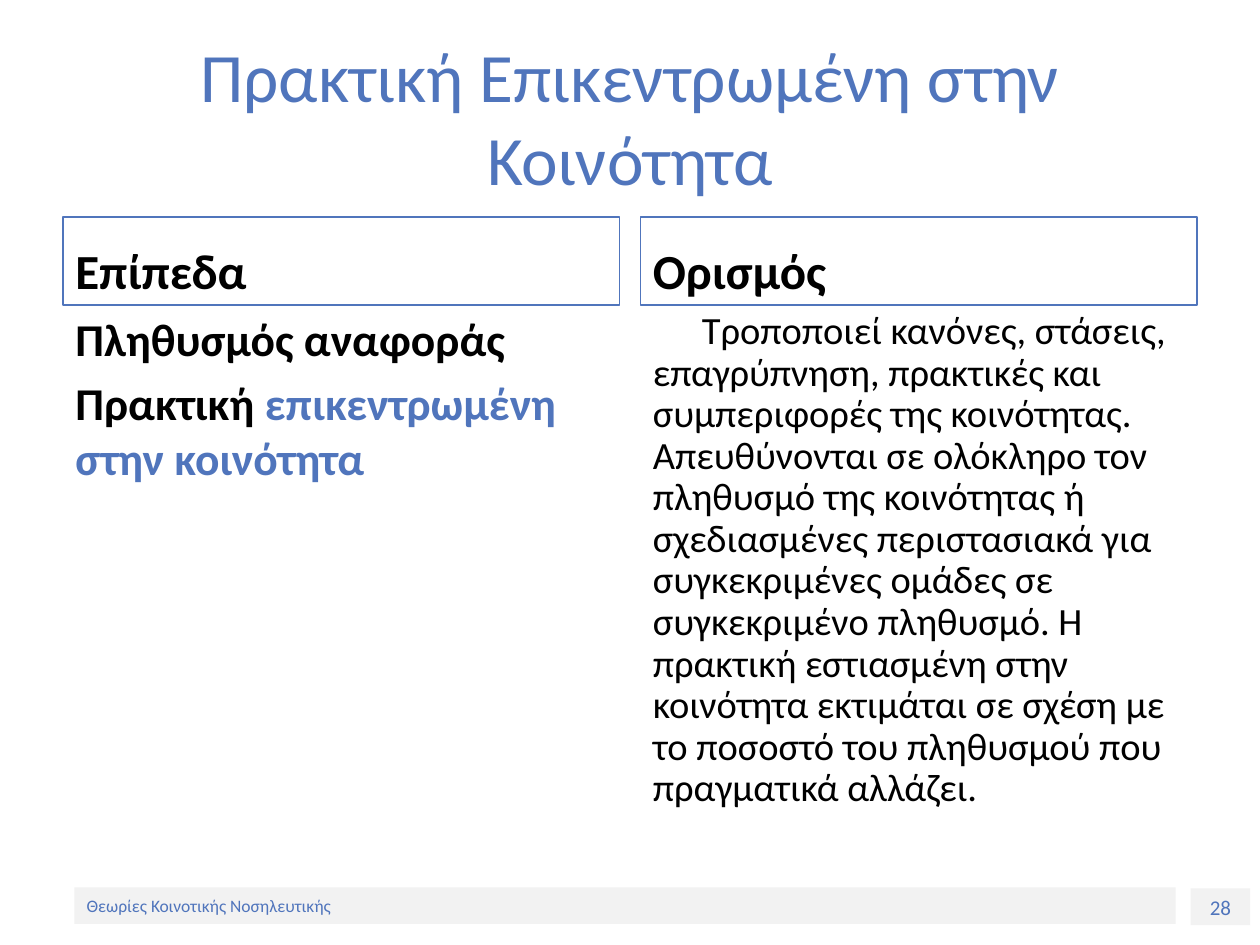
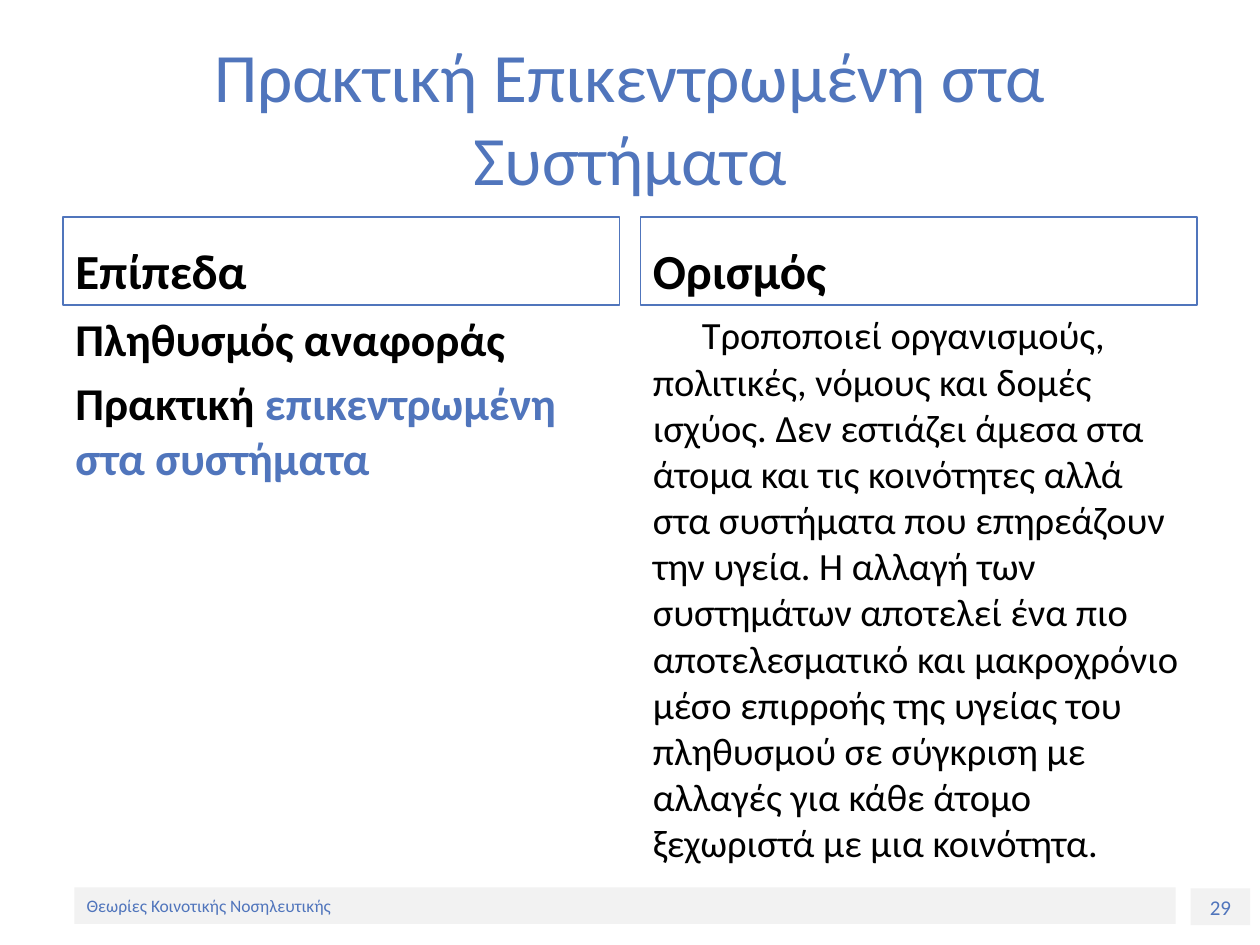
from dataclasses import dataclass

import pptx
import pptx.dml.color
import pptx.enum.shapes
import pptx.enum.text
import pptx.util

Pt = pptx.util.Pt
Align = pptx.enum.text.PP_ALIGN
Anchor = pptx.enum.text.MSO_ANCHOR


@dataclass(frozen=True)
class Theme:
    font: str = "Calibri"
    accent: str = "5075BC"
    ink: str = "000000"
    band: str = "F2F2F2"
    title_size: float = 39.6
    heading_size: float = 28
    level_size: float = 26
    definition_size: float = 22
    number_size: float = 12
    footer_size: float = 10
    outline: float = 0.75
    space_ratio: float = 0.2
    first_indent: float = 28


THEME = Theme()
PAGE_WIDTH, PAGE_HEIGHT = 720, 540
MARGIN, COLUMN_WIDTH = 36, 318
COLUMN_LEFTS = (MARGIN, PAGE_WIDTH - MARGIN - COLUMN_WIDTH)
HEADING_TOP, HEADING_HEIGHT = 124, 50.4
BODY_TOP, BODY_HEIGHT = HEADING_TOP + HEADING_HEIGHT, 305
FOOTER = "Θεωρίες Κοινοτικής Νοσηλευτικής"
HEADINGS = ("Επίπεδα", "Ορισμός")
FIRST_NUMBER = 28

TOPICS = [
    {
        "title": "Πρακτική Επικεντρωμένη στην Κοινότητα",
        "focus": "επικεντρωμένη στην κοινότητα",
        "definition": (
            "Τροποποιεί κανόνες, στάσεις, επαγρύπνηση, πρακτικές και "
            "συμπεριφορές της κοινότητας. Απευθύνονται σε ολόκληρο τον "
            "πληθυσμό της κοινότητας ή σχεδιασμένες περιστασιακά για "
            "συγκεκριμένες ομάδες σε συγκεκριμένο πληθυσμό. Η πρακτική "
            "εστιασμένη στην κοινότητα εκτιμάται σε σχέση με το ποσοστό "
            "του πληθυσμού που πραγματικά αλλάζει."
        ),
        "line_spacing": 0.9,
    },
    {
        "title": "Πρακτική Επικεντρωμένη στα Συστήματα",
        "focus": "επικεντρωμένη στα συστήματα",
        "definition": (
            "Τροποποιεί οργανισμούς, πολιτικές, νόμους και δομές ισχύος. "
            "Δεν εστιάζει άμεσα στα άτομα και τις κοινότητες αλλά στα "
            "συστήματα που επηρεάζουν την υγεία. Η αλλαγή των συστημάτων "
            "αποτελεί ένα πιο αποτελεσματικό και μακροχρόνιο μέσο επιρροής "
            "της υγείας του πληθυσμού σε σύγκριση με αλλαγές για κάθε άτομο "
            "ξεχωριστά με μια κοινότητα."
        ),
        "line_spacing": 1.0,
    },
]


def rgb(color):
    return pptx.dml.color.RGBColor.from_string(color)


def set_values(target, values):
    for name, value in values.items():
        setattr(target, name, value)


def write(box, paragraphs, size, anchor=Anchor.TOP, bold=False, **para_format):
    """Fill a box; each paragraph is a list of (text, colour) spans."""
    frame = box.text_frame
    set_values(frame, {"word_wrap": True, "vertical_anchor": anchor})
    for index, spans in enumerate(paragraphs):
        para = frame.add_paragraph() if index else frame.paragraphs[0]
        space = Pt(size * THEME.space_ratio) if index else Pt(0)
        set_values(para, {"alignment": Align.LEFT, "space_before": space, **para_format})
        for text, color in spans:
            span = para.add_run()
            span.text = text
            set_values(span.font, {"name": THEME.font, "size": Pt(size), "bold": bold})
            span.font.color.rgb = rgb(color)


def add_text(page, area, paragraphs, size, **options):
    box = page.shapes.add_textbox(*map(Pt, area))
    write(box, paragraphs, size, **options)
    return box


def add_panel(page, area, text, size, color, fill=None, outline=None, **options):
    panel = page.shapes.add_shape(
        pptx.enum.shapes.MSO_SHAPE.RECTANGLE, *map(Pt, area))
    panel.shadow.inherit = False
    if fill:
        panel.fill.solid()
        panel.fill.fore_color.rgb = rgb(fill)
    else:
        panel.fill.background()
    if outline:
        panel.line.color.rgb = rgb(outline)
        panel.line.width = Pt(THEME.outline)
    else:
        panel.line.fill.background()
    write(panel, [[(text, color)]], size, **options)


def add_footer(page, number):
    style = {"color": THEME.accent, "fill": THEME.band}
    add_panel(page, (680.4, 507.6, 34, 21), str(number), THEME.number_size,
              alignment=Align.CENTER, **style)
    add_panel(page, (42.5, 507, 629.3, 21), FOOTER, THEME.footer_size,
              anchor=Anchor.MIDDLE, **style)


def add_headings(page):
    for left, heading in zip(COLUMN_LEFTS, HEADINGS):
        add_panel(page, (left, HEADING_TOP, COLUMN_WIDTH, HEADING_HEIGHT), heading,
                  THEME.heading_size, THEME.ink, outline=THEME.accent,
                  anchor=Anchor.BOTTOM, bold=True)


def add_levels(page, focus):
    paragraphs = [
        [("Πληθυσμός αναφοράς", THEME.ink)],
        [("Πρακτική ", THEME.ink), (focus, THEME.accent)],
    ]
    add_text(page, (COLUMN_LEFTS[0], BODY_TOP, COLUMN_WIDTH, BODY_HEIGHT),
             paragraphs, THEME.level_size, bold=True)


def add_definition(page, definition, line_spacing):
    box = add_text(page, (COLUMN_LEFTS[1], BODY_TOP, COLUMN_WIDTH, BODY_HEIGHT),
                   [[(definition, THEME.ink)]], THEME.definition_size,
                   line_spacing=line_spacing)
    properties = box.text_frame.paragraphs[0]._p.get_or_add_pPr()
    properties.set("indent", str(Pt(THEME.first_indent)))


def add_title(page, title):
    add_text(page, (MARGIN, 21.6, PAGE_WIDTH - 2 * MARGIN, 90),
             [[(title, THEME.accent)]], THEME.title_size,
             anchor=Anchor.MIDDLE, alignment=Align.CENTER)


def main():
    deck = pptx.Presentation()
    set_values(deck, {"slide_width": Pt(PAGE_WIDTH), "slide_height": Pt(PAGE_HEIGHT)})
    for number, topic in enumerate(TOPICS, FIRST_NUMBER):
        page = deck.slides.add_slide(deck.slide_layouts[6])
        add_footer(page, number)
        add_headings(page)
        add_levels(page, topic["focus"])
        add_definition(page, topic["definition"], topic["line_spacing"])
        add_title(page, topic["title"])
    deck.save("out.pptx")


if __name__ == "__main__":
    main()
